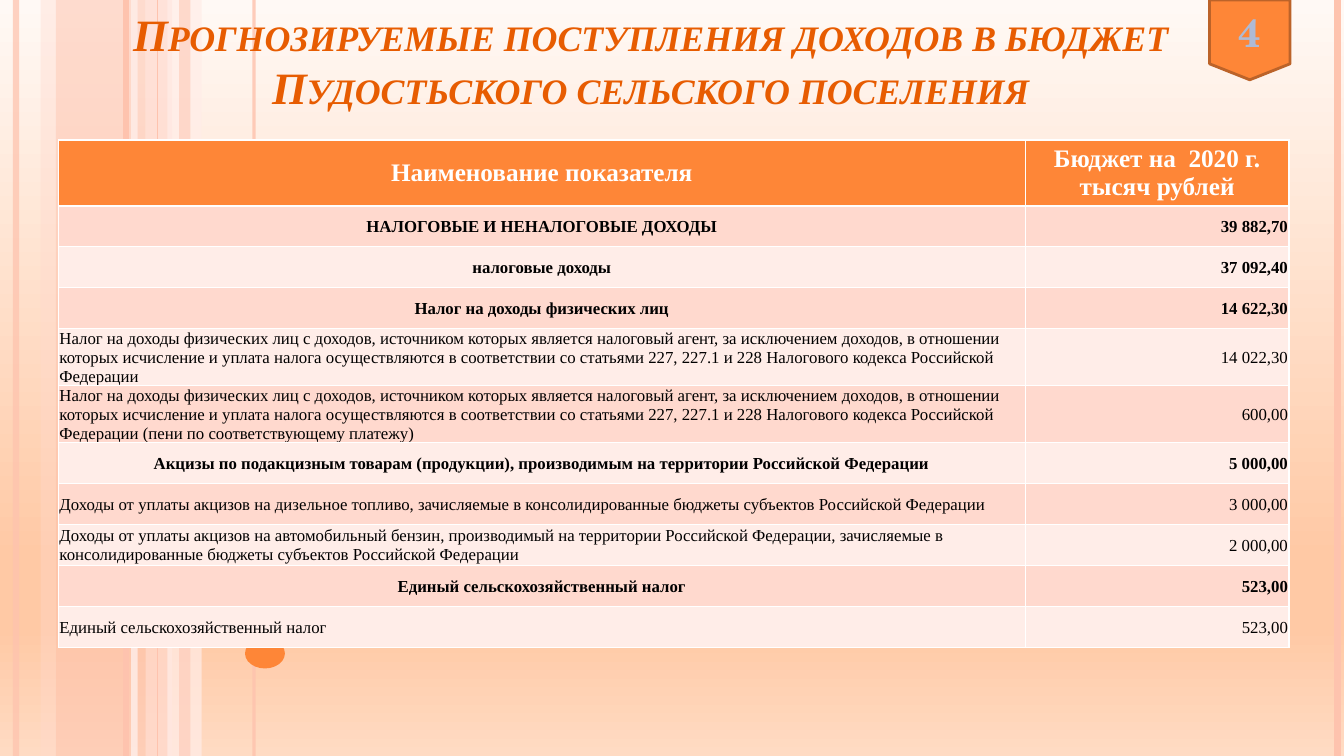
"""Build the slide on forecast income of the Pudost settlement budget."""
from dataclasses import dataclass

from pptx import Presentation
from pptx.dml.color import RGBColor
from pptx.enum import shapes as es, text as et
from pptx.oxml import ns, parse_xml
from pptx.util import Pt

WIDE, HIGH = 960, 540
NS = ns.nsdecls("a")


@dataclass(frozen=True)
class Theme:
    """Hold the colours, fonts and type sizes."""
    main: str = "FE8637"
    edge: str = "BC6329"
    title: str = "E75C01"
    badge: str = "AEBAD5"
    rose: str = "FEC3AE"
    peach: str = "FFD9CE"
    pale: str = "FFEDE8"
    white: str = "FFFFFF"
    black: str = "000000"
    serif: str = "Times New Roman"
    round: str = "TeX Gyre Schola"
    big: int = 32
    mark: int = 28
    head: int = 18
    body: int = 12
    sky: tuple = ((0, "FFF9F5"), (74, "FFC9A5"), (83, "FFC9A5"), (100, "FFDBC3"))


T = Theme()
BANDS = [
    (40, 64, T.rose, 54), (29, 11, T.peach, 36), (104, 19, T.peach, 70),
    (119.5, 24.5, T.pale, 71), (128, 8, T.rose, 51),
]
LINES = [
    (11.5, T.rose, 4.5, 73), (96, T.pale, 4.5, 83), (90, T.rose, 4.5, 100),
    (181.5, T.rose, 2.25, 82), (112.5, T.rose, 0.75, 100), (955.5, T.rose, 4.5, 100),
]
HEAD = ("Наименование показателя", "Бюджет на  2020 г. тысяч рублей")
AGENT = (
    "Налог на доходы физических лиц с доходов, источником которых является "
    "налоговый агент, за исключением доходов, в отношении которых исчисление и "
    "уплата налога осуществляются в соответствии со статьями 227, 227.1 и 228 "
    "Налогового кодекса Российской Федерации"
)
FARM = "Единый сельскохозяйственный налог"
ROWS = [
    ("НАЛОГОВЫЕ И НЕНАЛОГОВЫЕ ДОХОДЫ", "39 882,70", True, 29.25),
    ("налоговые доходы", "37 092,40", True, 29.25),
    ("Налог на доходы физических лиц", "14 622,30", True, 29.25),
    (AGENT, "14 022,30", False, 40.75),
    (AGENT + " (пени по соответствующему платежу)", "600,00", False, 40.75),
    ("Акцизы по подакцизным товарам (продукции), производимым на территории "
     "Российской Федерации", "5 000,00", True, 29.25),
    ("Доходы от уплаты акцизов на дизельное топливо, зачисляемые в "
     "консолидированные бюджеты субъектов Российской Федерации",
     "3 000,00", False, 29.25),
    ("Доходы от уплаты акцизов на автомобильный бензин, производимый на "
     "территории Российской Федерации, зачисляемые в консолидированные бюджеты "
     "субъектов Российской Федерации", "2 000,00", False, 29.25),
    (FARM, "523,00", True, 29.25),
    (FARM, "523,00", False, 29.25),
]


def assign(item, form):
    """Set each attribute named in form."""
    for name, value in form.items():
        setattr(item, name, value)


def paint(fill, tone, clear=100):
    """Fill with a solid colour of the given opacity."""
    fill.solid()
    fill.fore_color.rgb = RGBColor.from_string(tone)
    if clear < 100:
        node = fill._xPr.find(".//" + ns.qn("a:srgbClr"))
        node.append(parse_xml(f'<a:alpha {NS} val="{clear * 1000}"/>'))


def write(frame, words, tone, align, form):
    """Write one formatted run and return it."""
    frame.word_wrap = True
    frame.vertical_anchor = et.MSO_ANCHOR.MIDDLE
    para = frame.paragraphs[0]
    para.alignment = align
    run = para.add_run()
    run.text = words
    assign(run.font, form)
    run.font.color.rgb = RGBColor.from_string(tone)
    return run


def shade(slide):
    """Lay the gradient on the background."""
    fill = slide.background.fill
    fill.gradient()
    fill.gradient_angle = 270
    stops = fill._fill._gradFill.find(ns.qn("a:gsLst"))
    for stop in list(stops):
        stops.remove(stop)
    for place, tone in T.sky:
        stops.append(parse_xml(
            f'<a:gs {NS} pos="{place * 1000}"><a:srgbClr val="{tone}"/></a:gs>'))


def shape(slide, kind, box, tone, clear=100):
    """Add a filled shape without outline."""
    item = slide.shapes.add_shape(kind, *map(Pt, box))
    item.shadow.inherit = False
    paint(item.fill, tone, clear)
    item.line.fill.background()
    return item


def stripe(slide, left, tone, width, clear):
    """Draw a line down the full height."""
    line = slide.shapes.add_connector(
        es.MSO_CONNECTOR.STRAIGHT, Pt(left), Pt(0), Pt(left), Pt(HIGH))
    line.line.width = Pt(width)
    paint(line.line.fill, tone, clear)
    line._element.spPr.append(parse_xml(f"<a:effectLst {NS}/>"))


def title(slide):
    """Place and format the title."""
    item = slide.shapes.title
    assign(item, dict(left=Pt(65.5), top=Pt(0), width=Pt(798.5), height=Pt(85)))
    form = dict(name=T.serif, size=Pt(T.big), bold=True, italic=True)
    run = write(
        item.text_frame,
        "Прогнозируемые поступления доходов в бюджет Пудостьского сельского поселения",
        T.title, et.PP_ALIGN.CENTER, form)
    run._r.get_or_add_rPr().set("cap", "small")
    item.text_frame.vertical_anchor = et.MSO_ANCHOR.BOTTOM


def border(cell):
    """Draw white lines on all sides of a cell."""
    props = cell._tc.get_or_add_tcPr()
    for spot, side in enumerate("LRTB"):
        props.insert(spot, parse_xml(
            f'<a:ln{side} {NS} w="12700"><a:solidFill>'
            f'<a:srgbClr val="{T.white}"/></a:solidFill></a:ln{side}>'))


def entry(cell, words, fill, tone, align, size, bold):
    """Fill and write one table cell."""
    paint(cell.fill, fill)
    border(cell)
    write(cell.text_frame, words, tone, align,
          dict(name=T.serif, size=Pt(size), bold=bold))
    cell.vertical_anchor = et.MSO_ANCHOR.MIDDLE


def budget(slide):
    """Build the table of income."""
    tall = 46.75 + sum(row[-1] for row in ROWS)
    grid = slide.shapes.add_table(
        len(ROWS) + 1, 2, Pt(41.75), Pt(100), Pt(879), Pt(tall)).table
    for col, width in zip(grid.columns, (690.5, 188.5)):
        col.width = Pt(width)
    grid.rows[0].height = Pt(46.75)
    mid, left, right = et.PP_ALIGN.CENTER, et.PP_ALIGN.LEFT, et.PP_ALIGN.RIGHT
    for col, words in enumerate(HEAD):
        entry(grid.cell(0, col), words, T.main, T.white, mid, T.head, True)
    slim = dict(margin_left=Pt(0.75), margin_right=Pt(0.75),
                margin_top=Pt(0.75), margin_bottom=Pt(0))
    for num, (name, total, bold, height) in enumerate(ROWS, 1):
        grid.rows[num].height = Pt(height)
        fill = T.peach if num % 2 else T.pale
        sides = (mid if bold else left, right)
        for col, (words, align) in enumerate(zip((name, total), sides)):
            cell = grid.cell(num, col)
            assign(cell, slim)
            entry(cell, words, fill, T.black, align, T.body, bold)


def badge(slide):
    """Add the page number on its tag."""
    item = shape(slide, es.MSO_SHAPE.FLOWCHART_OFFPAGE_CONNECTOR,
                 (864, 0, 57.5, 57), T.main)
    paint(item.line.fill, T.edge)
    item.line.width = Pt(2)
    write(item.text_frame, "4", T.badge, et.PP_ALIGN.CENTER,
          dict(name=T.round, size=Pt(T.mark), bold=True))


def main():
    """Build and save the deck."""
    deck = Presentation()
    assign(deck, dict(slide_width=Pt(WIDE), slide_height=Pt(HIGH)))
    slide = deck.slides.add_slide(deck.slide_layouts[5])
    shade(slide)
    for left, width, tone, clear in BANDS:
        shape(slide, es.MSO_SHAPE.RECTANGLE, (left, 0, width, HIGH), tone, clear)
    for line in LINES:
        stripe(slide, *line)
    shape(slide, es.MSO_SHAPE.OVAL, (175, 456, 28.5, 21.5), T.main)
    tree = slide.shapes._spTree
    tree.append(slide.shapes.title._element)
    title(slide)
    budget(slide)
    badge(slide)
    deck.save("out.pptx")


if __name__ == "__main__":
    main()
